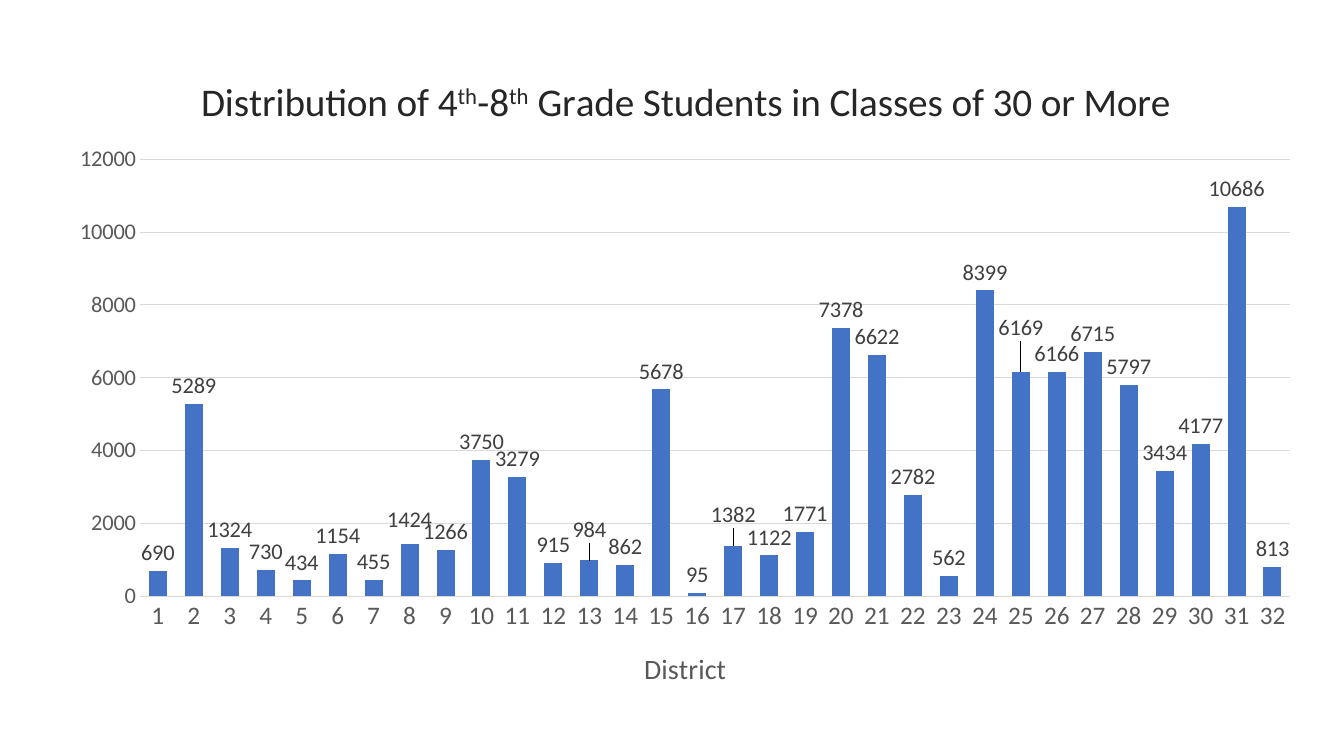
from typing import NamedTuple

from lxml.etree import SubElement
from pptx import Presentation
from pptx.chart.data import CategoryChartData
from pptx.dml.color import RGBColor
from pptx.enum.chart import XL_CHART_TYPE as ChartType
from pptx.enum.chart import XL_LABEL_POSITION as LabelPosition
from pptx.enum.chart import XL_TICK_MARK as TickMark
from pptx.oxml.ns import qn
from pptx.util import Inches, Pt

COLORS = {
    "bar": "4472C4",
    "title": "262626",
    "label": "404040",
    "axis": "595959",
    "grid": "D9D9D9",
}
FONT = "Calibri"
STUDENTS = (
    690, 5289, 1324, 730, 434, 1154, 455, 1424,
    1266, 3750, 3279, 915, 984, 862, 5678, 95,
    1382, 1122, 1771, 7378, 6622, 2782, 562, 8399,
    6169, 6166, 6715, 5797, 3434, 4177, 10686, 813,
)


class TitleRun(NamedTuple):
    text: str
    superscript: bool = False


class RaisedLabel(NamedTuple):
    district: int
    shift: float


TITLE_RUNS = (
    TitleRun("Distribution of 4"),
    TitleRun("th", True),
    TitleRun("-8"),
    TitleRun("th", True),
    TitleRun(" Grade Students in Classes of 30 or More"),
)
RAISED_LABELS = (
    RaisedLabel(8, -0.01),
    RaisedLabel(13, -0.02),
    RaisedLabel(17, -0.02),
    RaisedLabel(25, -0.04),
)


def color(name: str) -> RGBColor:
    return RGBColor.from_string(COLORS[name])


def style_font(font, size: int, color_name: str) -> None:
    font.name = FONT
    font.size = Pt(size)
    font.bold = False
    font.color.rgb = color(color_name)


def style_line(line) -> None:
    line.color.rgb = color("grid")
    line.width = Pt(0.75)


def set_layout(parent, index: int, **settings) -> None:
    """Give a chart part a manual layout in fractions of the chart size."""
    for old_layout in parent.findall(qn("c:layout")):
        parent.remove(old_layout)
    layout = SubElement(parent, qn("c:layout"))
    parent.insert(index, layout)
    manual = SubElement(layout, qn("c:manualLayout"))
    for tag, value in settings.items():
        SubElement(manual, qn(f"c:{tag}")).set("val", str(value))


def add_title(chart) -> None:
    chart.has_title = True
    paragraph = chart.chart_title.text_frame.paragraphs[0]
    style_font(paragraph.font, 28, "title")
    for part in TITLE_RUNS:
        run = paragraph.add_run()
        run.text = part.text
        if part.superscript:
            run.font._element.set("baseline", "30000")


def style_axes(chart) -> None:
    districts, students = chart.category_axis, chart.value_axis
    for axis, size in ((districts, 18), (students, 16)):
        axis.major_tick_mark = axis.minor_tick_mark = TickMark.NONE
        style_font(axis.tick_labels.font, size, "axis")
    style_line(districts.format.line)
    students.format.line.fill.background()
    students.minimum_scale, students.maximum_scale = 0, 12000
    students.major_unit = 2000
    style_line(students.major_gridlines.format.line)
    paragraph = districts.axis_title.text_frame.paragraphs[0]
    paragraph.text = "District"
    style_font(paragraph.font, 20, "axis")


def style_bars(plot) -> None:
    plot.gap_width = 100
    plot.vary_by_categories = False
    series = plot.series[0]
    series.format.fill.solid()
    series.format.fill.fore_color.rgb = color("bar")
    labels = series.data_labels
    labels.show_value = True
    labels.position = LabelPosition.OUTSIDE_END
    style_font(labels.font, 16, "label")
    for raised in RAISED_LABELS:
        label = series.points[raised.district - 1].data_label
        label.position = LabelPosition.OUTSIDE_END
        style_font(label.font, 16, "label")
        set_layout(label._get_or_add_dLbl(), 1, x=0, y=raised.shift)


def add_district_chart(slide) -> None:
    data = CategoryChartData()
    data.categories = [str(number + 1) for number in range(len(STUDENTS))]
    data.add_series("Series 1", STUDENTS)
    chart = slide.shapes.add_chart(
        ChartType.COLUMN_CLUSTERED,
        Inches(0.55), Inches(0.56), Inches(12.5), Inches(6.5), data,
    ).chart
    chart.has_legend = False
    chart.font.name = FONT
    chart.font.size = Pt(10)
    add_title(chart)
    style_axes(chart)
    style_bars(chart.plots[0])
    plot_area = chart._chartSpace.chart.plotArea
    set_layout(
        plot_area, 0, layoutTarget="inner", xMode="edge", yMode="edge",
        x=0.067, y=0.157, w=0.913, h=0.667,
    )


def main() -> None:
    presentation = Presentation()
    presentation.slide_width = Inches(13.33)
    presentation.slide_height = Inches(7.5)
    slide = presentation.slides.add_slide(presentation.slide_layouts[6])
    add_district_chart(slide)
    presentation.save("out.pptx")


if __name__ == "__main__":
    main()
